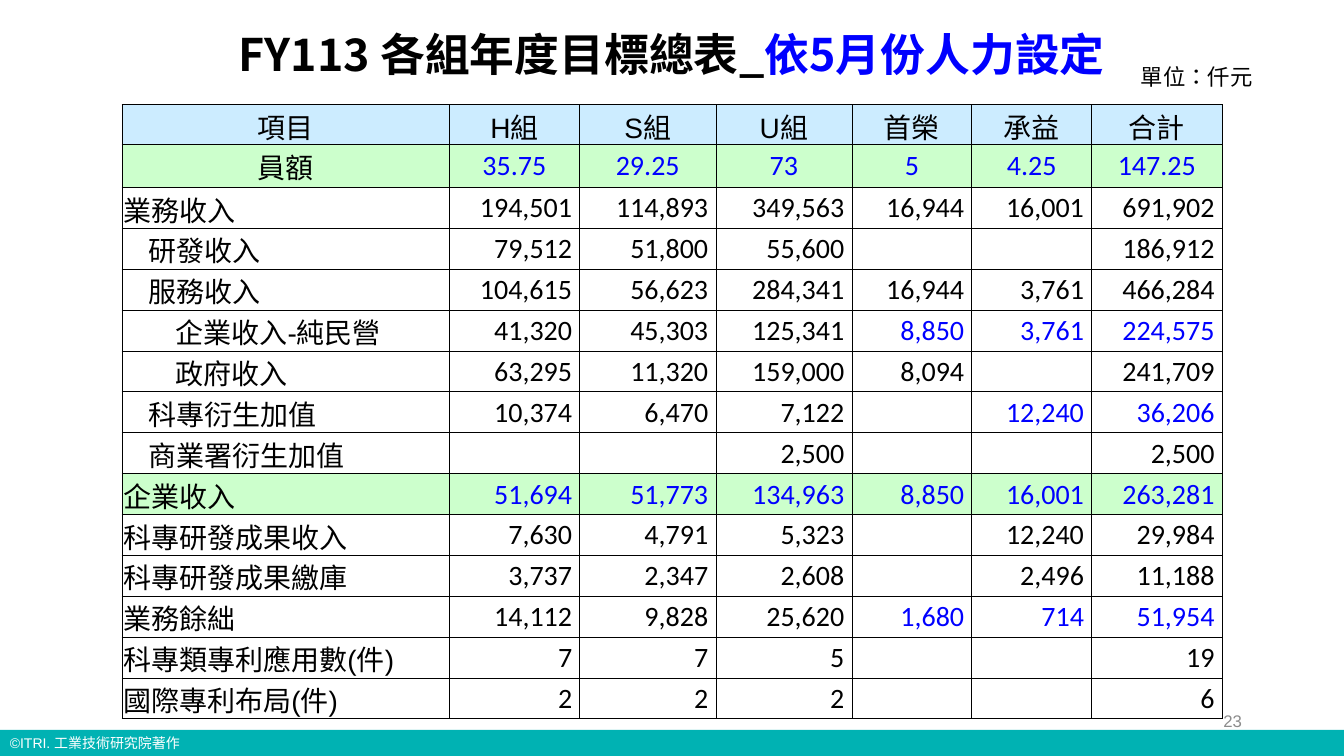
from pptx import Presentation
from pptx.dml.color import RGBColor
from pptx.enum.lang import MSO_LANGUAGE_ID as LANG
from pptx.enum.shapes import MSO_SHAPE
from pptx.enum.text import MSO_ANCHOR as ANCHOR, PP_ALIGN as ALIGN
from pptx.oxml import parse_xml
from pptx.oxml.ns import nsdecls
from pptx.util import Cm, Pt

COLORS = {"black": "000000", "blue": "0000FF", "white": "FFFFFF", "teal": "00B2B3",
          "header": "CCECFF", "green": "CCFFCC", "gray": "8C8C8C"}
WIDTH, HEIGHT = 33.87, 19.05
COL_WIDTHS = [8.25, 3.29, 3.43, 3.43, 3.02, 3.02, 3.29]
ROW_HEIGHTS = [0.99, 1.09] + [1.03] * 13
INDENTS = [0.03, 0.67, 1.35]
HEADER = ["項目", "H組", "S組", "U組", "首榮", "承益", "合計"]
HEADCOUNT = ["員額", "35.75", "29.25", "73", "5", "4.25", "147.25"]
ITEMS = [
    (0, "業務收入", [194501, 114893, 349563, 16944, 16001, 691902], ()),
    (1, "研發收入", [79512, 51800, 55600, None, None, 186912], ()),
    (1, "服務收入", [104615, 56623, 284341, 16944, 3761, 466284], ()),
    (2, "企業收入-純民營", [41320, 45303, 125341, 8850, 3761, 224575], (4, 5, 6)),
    (2, "政府收入", [63295, 11320, 159000, 8094, None, 241709], ()),
    (1, "科專衍生加值", [10374, 6470, 7122, None, 12240, 36206], (5, 6)),
    (1, "商業署衍生加值", [None, None, 2500, None, None, 2500], ()),
    (0, "企業收入", [51694, 51773, 134963, 8850, 16001, 263281], range(1, 7)),
    (0, "科專研發成果收入", [7630, 4791, 5323, None, 12240, 29984], ()),
    (0, "科專研發成果繳庫", [3737, 2347, 2608, None, 2496, 11188], ()),
    (0, "業務餘絀", [14112, 9828, 25620, 1680, 714, 51954], (4, 5, 6)),
    (0, "科專類專利應用數(件)", [7, 7, 5, None, None, 19], ()),
    (0, "國際專利布局(件)", [2, 2, 2, None, None, 6], ()),
]
GREEN_ITEM = "企業收入"


def rgb(name):
    return RGBColor.from_string(COLORS[name])


def style(font, size, name, color):
    font.size, font.name = Pt(size), name
    font.color.rgb = rgb(color)


def add_text(slide, box, text, size, color, align=ALIGN.LEFT, anchor=ANCHOR.TOP):
    tf = slide.shapes.add_textbox(*map(Cm, box)).text_frame
    tf.word_wrap, tf.vertical_anchor = True, anchor
    p = tf.paragraphs[0]
    p.alignment = align
    r = p.add_run()
    r.text = text
    r.font.language_id = LANG.TAIWAN if hasattr(LANG, "TAIWAN") else LANG.TRADITIONAL_CHINESE
    style(p.font, size, "Arial", color)
    return tf


def add_unit(slide, box):
    tf = add_text(slide, box, "單位：仟元", 16, "black")
    tf.word_wrap = False


def add_title(slide, box):
    tf = slide.shapes.add_textbox(*map(Cm, box)).text_frame
    tf.word_wrap, tf.vertical_anchor = True, ANCHOR.BOTTOM
    p = tf.paragraphs[0]
    p.alignment, p.line_spacing = ALIGN.CENTER, 0.9
    for text, color in (("FY113 各組年度目標總表_", "black"), ("依5月份人力設定", "blue")):
        r = p.add_run()
        r.text = text
        style(r.font, 32, "Noto Sans CJK SC", color)
        r.font.bold = True


def set_cell(cell, text, font, color, align, left=0.03, right=0.03, fill=None):
    cell.margin_left, cell.margin_right = Cm(left), Cm(right)
    cell.margin_top, cell.margin_bottom = Cm(0.03), 0
    cell.vertical_anchor = ANCHOR.MIDDLE
    p = cell.text_frame.paragraphs[0]
    p.text, p.alignment = text, align
    style(p.font, 20, font, color)
    tc_pr = cell._tc.get_or_add_tcPr()
    for side in ("lnL", "lnR", "lnT", "lnB"):
        tc_pr.append(parse_xml(
            f'<a:{side} {nsdecls("a")} w="6350"><a:solidFill>'
            f'<a:srgbClr val="{COLORS["black"]}"/></a:solidFill></a:{side}>'))
    if fill:
        cell.fill.solid()
        cell.fill.fore_color.rgb = rgb(fill)
    else:
        cell.fill.background()


def add_targets(slide, left, top):
    table = slide.shapes.add_table(
        len(ROW_HEIGHTS), len(COL_WIDTHS), Cm(left), Cm(top),
        Cm(sum(COL_WIDTHS)), Cm(sum(ROW_HEIGHTS))).table
    table.first_row = table.horz_banding = False
    for col, width in zip(table.columns, COL_WIDTHS):
        col.width = Cm(width)
    for row, height in zip(table.rows, ROW_HEIGHTS):
        row.height = Cm(height)
    for c, (group, count) in enumerate(zip(HEADER, HEADCOUNT)):
        set_cell(table.cell(0, c), group, "Arial", "black", ALIGN.CENTER, fill="header")
        font, color = ("Calibri", "blue") if c else ("Arial", "black")
        set_cell(table.cell(1, c), count, font, color, ALIGN.CENTER, fill="green")
    for r, (level, label, values, blue) in enumerate(ITEMS, 2):
        fill = "green" if label == GREEN_ITEM else None
        set_cell(table.cell(r, 0), label, "Arial", "black", ALIGN.LEFT,
                 left=INDENTS[level], fill=fill)
        for c, value in enumerate(values, 1):
            set_cell(table.cell(r, c), "" if value is None else f"{value:,}", "Calibri",
                     "blue" if c in blue else "black", ALIGN.RIGHT, right=0.19, fill=fill)


def add_footer(slide, left, top, width, height):
    sp = slide.shapes.add_shape(MSO_SHAPE.RECTANGLE, *map(Cm, (left, top, width, height)))
    sp.shadow.inherit = False
    sp.fill.solid()
    sp.fill.fore_color.rgb = rgb("teal")
    sp.line.fill.background()
    add_text(slide, (left, top, 9.91, 0.69), "©ITRI. 工業技術研究院著作", 10, "white")


def main():
    prs = Presentation()
    prs.slide_width, prs.slide_height = Cm(WIDTH), Cm(HEIGHT)
    slide = prs.slides.add_slide(prs.slide_layouts[6])
    add_footer(slide, 0, 18.39, WIDTH, 0.66)
    add_unit(slide, (28.5, 1.47, 3.63, 0.94))
    add_targets(slide, 3.07, 2.64)
    add_title(slide, (0, 0.66, WIDTH, 1.5))
    add_text(slide, (23.93, 17.65, 7.62, 1.02), "23", 12, "gray", ALIGN.RIGHT, ANCHOR.MIDDLE)
    prs.save("out.pptx")


if __name__ == "__main__":
    main()
